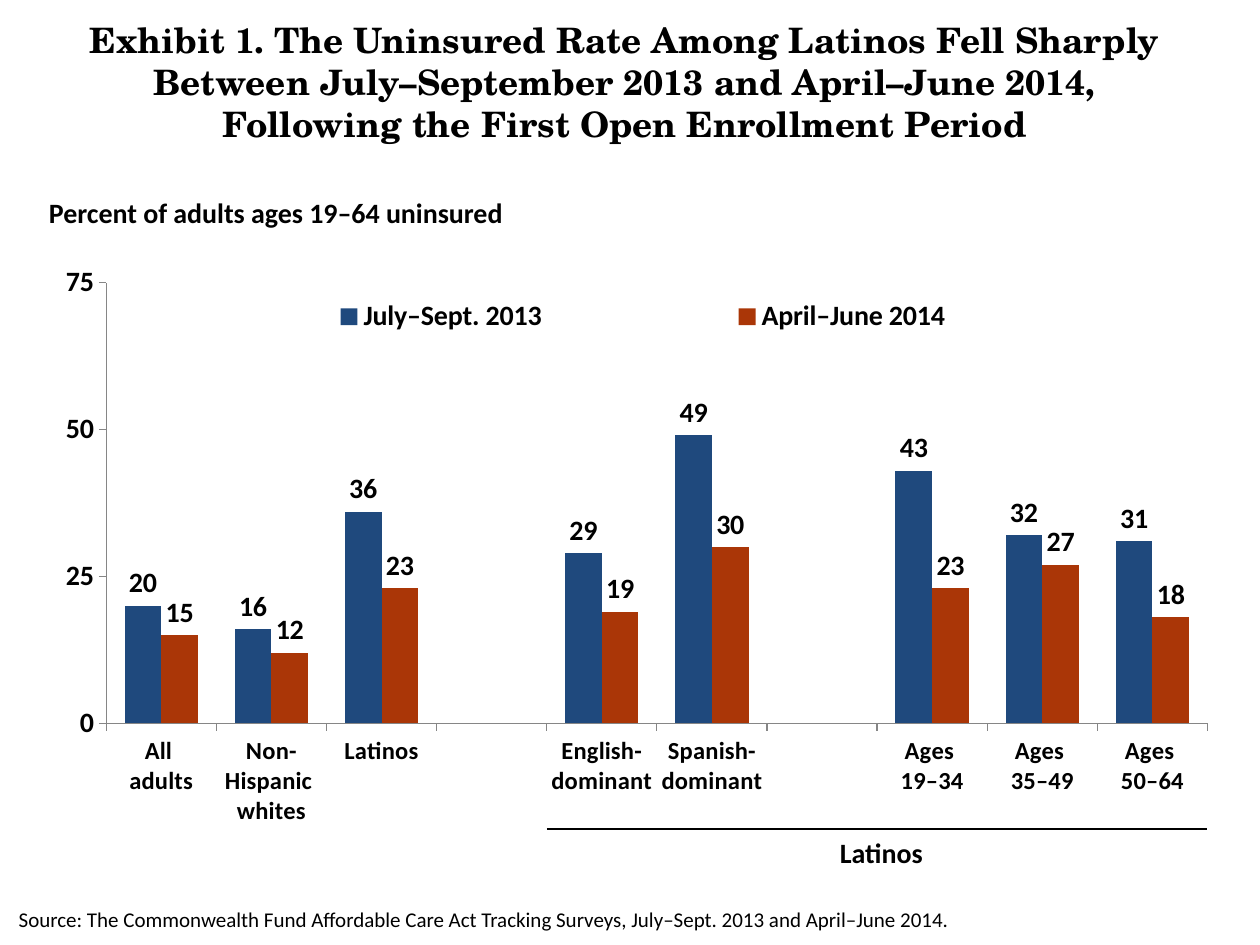
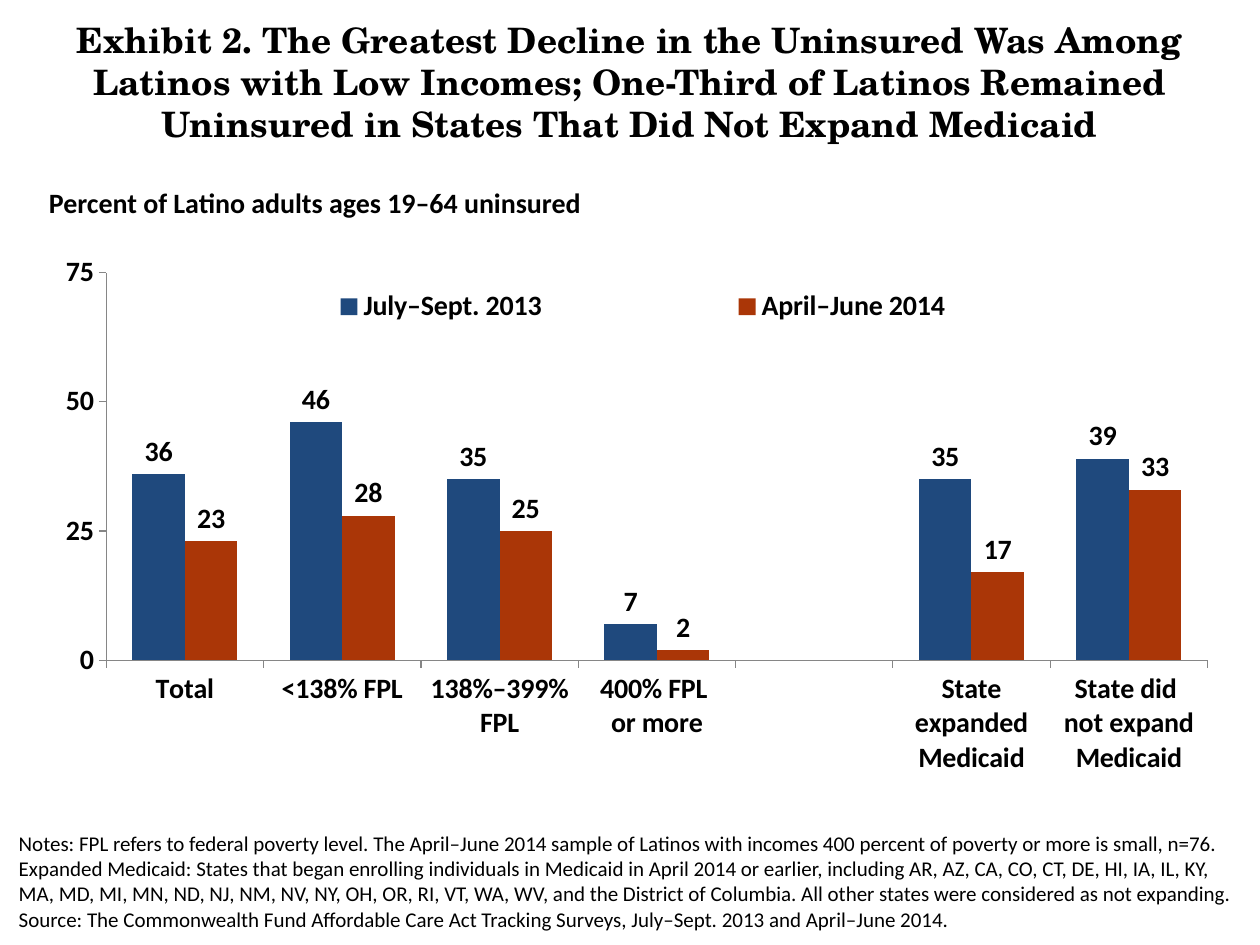
import pptx
import pptx.chart.data
import pptx.dml.color
import pptx.enum.chart
import pptx.enum.shapes
import pptx.enum.text
import pptx.oxml
import pptx.oxml.ns
import pptx.util

COLORS = {"text": "000000", "axis": "868686", "before": "1F497D", "after": "AA3607"}
BODY_FONT, TITLE_FONT = "Calibri", "TeX Gyre Schola"
COLUMNS, ROWS = 100, 75
PERIODS = {"before": "July–Sept. 2013", "after": "April–June 2014"}
SOURCE = ("Source: The Commonwealth Fund Affordable Care Act Tracking Surveys, "
          "July–Sept. 2013 and April–June 2014.")
ALIGN = pptx.enum.text.PP_ALIGN
ANCHOR = pptx.enum.text.MSO_ANCHOR


def color(name):
    return pptx.dml.color.RGBColor.from_string(COLORS[name])


def set_layout(parent, index, target, **shares):
    """Give a chart part a fixed place, as shares of the chart."""
    for old in parent.findall(pptx.oxml.ns.qn("c:layout")):
        parent.remove(old)
    target_tag = f'<c:layoutTarget val="{target}"/>' if target else ""
    modes = '<c:xMode val="edge"/><c:yMode val="edge"/>'
    sizes = "".join(f'<c:{key} val="{share}"/>' for key, share in shares.items())
    parent.insert(index, pptx.oxml.parse_xml(
        f'<c:layout {pptx.oxml.ns.nsdecls("c")}><c:manualLayout>'
        f"{target_tag}{modes}{sizes}</c:manualLayout></c:layout>"))


class Exhibits:
    """Holds the shared style and the current slide."""

    def __init__(self):
        self.deck = pptx.Presentation()
        self.deck.slide_width = pptx.util.Inches(10)
        self.deck.slide_height = pptx.util.Inches(7.5)
        self.page = None

    def across(self, columns):
        return round(self.deck.slide_width * columns / COLUMNS)

    def down(self, rows):
        return round(self.deck.slide_height * rows / ROWS)

    def area(self, left, top, width, height):
        return self.across(left), self.down(top), self.across(width), self.down(height)

    def style(self, font, size, bold=True, name=BODY_FONT):
        font.name, font.size, font.bold = name, pptx.util.Pt(size), bold
        font.color.rgb = color("text")

    def text(self, place, paragraphs, size=16, bold=True, name=BODY_FONT,
             align=ALIGN.LEFT, anchor=ANCHOR.TOP):
        box = self.page.shapes.add_textbox(*self.area(*place))
        frame = box.text_frame
        frame.word_wrap = True
        frame.vertical_anchor = anchor
        for index, wording in enumerate(paragraphs):
            para = frame.add_paragraph() if index else frame.paragraphs[0]
            para.text = wording
            para.alignment = align
            self.style(para.font, size, bold, name)

    def start(self, title):
        self.page = self.deck.slides.add_slide(self.deck.slide_layouts[6])
        self.text((0, 1, 100, 11), [title], size=20, name=TITLE_FONT, align=ALIGN.CENTER)

    def footer(self, paragraphs, lines=1, width=99.5):
        height = 1 + 2.02 * lines
        self.text((0.5, 74.5 - height, width, height), paragraphs, size=12, bold=False)

    def line(self, left, right, row):
        rule = self.page.shapes.add_connector(
            pptx.enum.shapes.MSO_CONNECTOR.STRAIGHT,
            self.across(left), self.down(row), self.across(right), self.down(row))
        rule.line.color.rgb = color("text")
        rule.line.width = pptx.util.Pt(0.75)
        rule._element.spPr.append(
            pptx.oxml.parse_xml(f'<a:effectLst {pptx.oxml.ns.nsdecls("a")}/>'))

    def chart(self, heading, top, rates, plot_height, label_size=16):
        """Draw the heading and clustered columns; rates are (label, before, after)."""
        self.text((2.9, top - 5.8, 67.9, 3.7), [heading], anchor=ANCHOR.MIDDLE)
        labels, *values = zip(*rates)
        data = pptx.chart.data.CategoryChartData()
        data.categories = labels
        for period, numbers in zip(PERIODS.values(), values):
            data.add_series(period, numbers)
        chart = self.page.shapes.add_chart(
            pptx.enum.chart.XL_CHART_TYPE.COLUMN_CLUSTERED,
            *self.area(3.8, top, 92.6, 48.3), data).chart
        chart.has_title = False
        self.style(chart.font, 16)

        # Columns and their values
        plot = chart.plots[0]
        plot.gap_width, plot.overlap = 100, 0
        plot.vary_by_categories = False
        for name, series in zip(PERIODS, plot.series):
            series.format.fill.solid()
            series.format.fill.fore_color.rgb = color(name)
            series.invert_if_negative = False
            series.data_labels.show_value = True
            series.data_labels.position = pptx.enum.chart.XL_LABEL_POSITION.OUTSIDE_END
            self.style(series.data_labels.font, 16)

        # Axes
        for axis, size in ((chart.category_axis, label_size), (chart.value_axis, 16)):
            axis.has_major_gridlines = False
            axis.major_tick_mark = pptx.enum.chart.XL_TICK_MARK.OUTSIDE
            axis.minor_tick_mark = pptx.enum.chart.XL_TICK_MARK.NONE
            axis.format.line.color.rgb = color("axis")
            axis.format.line.width = pptx.util.Pt(0.75)
            self.style(axis.tick_labels.font, size)
        scale = chart.value_axis
        scale.minimum_scale, scale.maximum_scale, scale.major_unit = 0, 75, 25

        # Legend and plot places
        chart.has_legend = True
        chart.legend.position = pptx.enum.chart.XL_LEGEND_POSITION.TOP
        chart.legend.include_in_layout = False
        self.style(chart.legend.font, 16)
        set_layout(chart.legend._element, 1, None, x=0.09, y=0.05, w=0.84, h=0.08)
        set_layout(chart._chartSpace.chart.plotArea, 0, "inner",
                   x=0.05, y=0.034, w=0.944, h=plot_height)


def main():
    exhibits = Exhibits()

    # Exhibit 1: rates by group, language and age
    exhibits.start("Exhibit 1. The Uninsured Rate Among Latinos Fell Sharply \n"
                   "Between July–September 2013 and April–June 2014, \n"
                   "Following the First Open Enrollment Period ")
    exhibits.chart("Percent of adults ages 19–64 uninsured", 20.8, [
        ("All \nadults", 20, 15),
        ("Non-\nHispanic \nwhites", 16, 12),
        ("Latinos", 36, 23),
        ("", None, None),
        ("English-\ndominant", 29, 19),
        ("Spanish-\ndominant", 49, 30),
        ("", None, None),
        ("Ages \n19–34", 43, 23),
        ("Ages \n35–49", 32, 27),
        ("Ages \n50–64", 31, 18),
    ], plot_height=0.724, label_size=14)
    exhibits.footer([SOURCE], width=82)
    exhibits.text((43.3, 65.8, 53.3, 3.7), ["Latinos"], align=ALIGN.CENTER)
    exhibits.line(43.4, 95.8, 65.8)

    # Exhibit 2: rates by income and state
    exhibits.start("Exhibit 2. The Greatest Decline in the Uninsured Was Among "
                   "Latinos with Low Incomes; One-Third of Latinos Remained "
                   "Uninsured in States That Did Not Expand Medicaid")
    exhibits.chart("Percent of Latino adults ages 19–64 uninsured", 20, [
        ("Total", 36, 23),
        ("<138% FPL", 46, 28),
        ("138%–399% FPL", 35, 25),
        ("400% FPL \nor more", 7, 2),
        ("", None, None),
        ("State expanded Medicaid", 35, 17),
        ("State did \nnot expand Medicaid", 39, 33),
    ], plot_height=0.637)
    exhibits.footer([
        "Notes: FPL refers to federal poverty level. The April–June 2014 sample of Latinos "
        "with incomes 400 percent of poverty or more is small, n=76. Expanded Medicaid: "
        "States that began enrolling individuals in Medicaid in April 2014 or earlier, "
        "including AR, AZ, CA, CO, CT, DE, HI, IA, IL, KY, MA, MD, MI, MN, ND, NJ, NM, NV, "
        "NY, OH, OR, RI, VT, WA, WV, and the District of Columbia. All other states were "
        "considered as not expanding.",
        SOURCE,
    ], lines=4)

    exhibits.deck.save("out.pptx")


if __name__ == "__main__":
    main()
